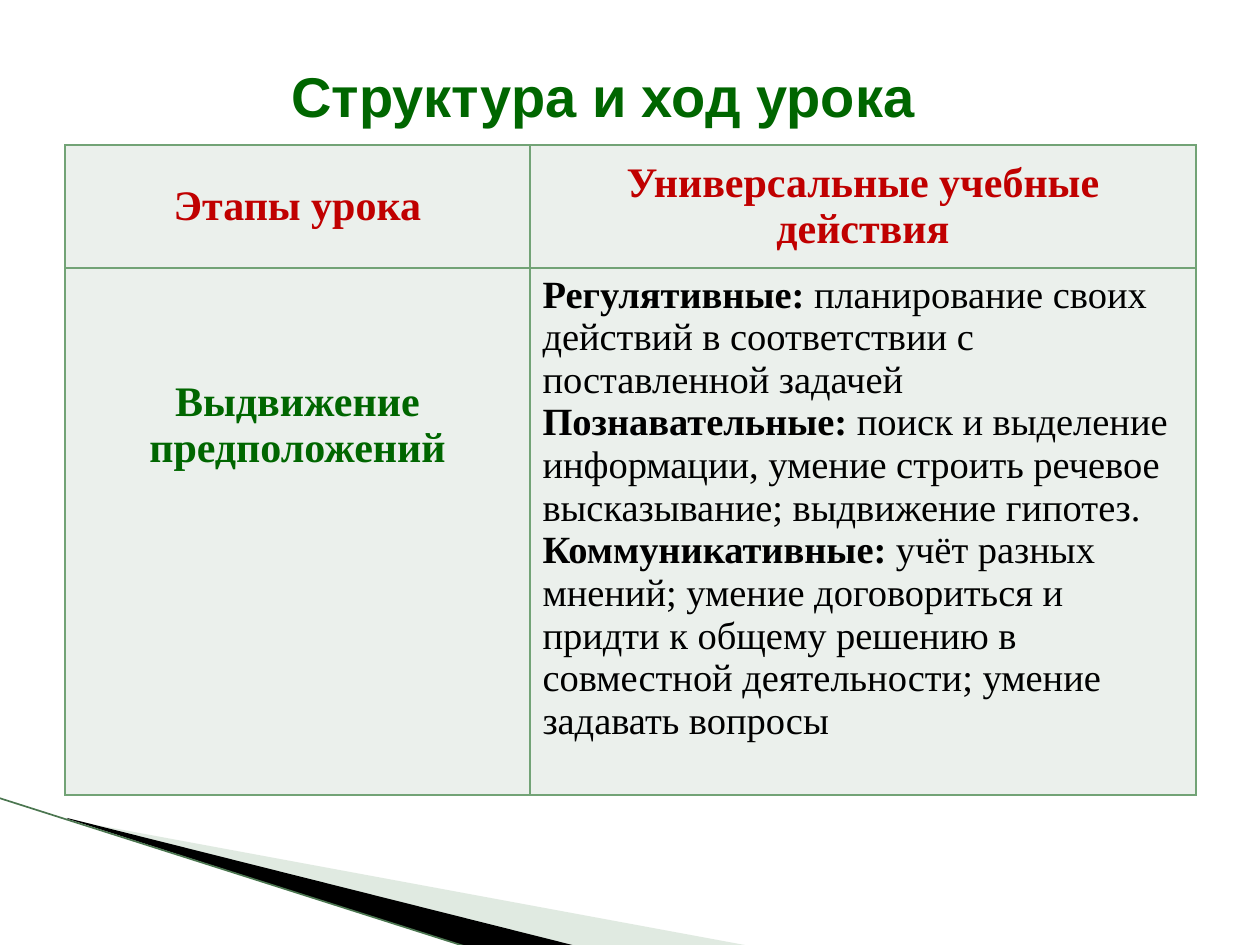
from dataclasses import dataclass

import pptx
import pptx.dml.color
import pptx.enum.shapes
import pptx.enum.text
import pptx.oxml
import pptx.oxml.ns
import pptx.util
from lxml import etree

RGBColor = pptx.dml.color.RGBColor
Align = pptx.enum.text.PP_ALIGN
Anchor = pptx.enum.text.MSO_ANCHOR
qn = pptx.oxml.ns.qn

PX_PER_INCH = 126
GREEN = RGBColor(0x00, 0x66, 0x00)
RED = RGBColor(0xC0, 0x00, 0x00)
BLACK = RGBColor(0x00, 0x00, 0x00)
SAGE = RGBColor(0xB3, 0xCB, 0xB5)
EDGE = RGBColor(0x4B, 0x76, 0x50)
BORDER = RGBColor(0x72, 0xA3, 0x76)
CELL_FILL = RGBColor(0xEB, 0xF0, 0xEC)
SERIF = "Times New Roman"


@dataclass
class Wedge:
    """The frame is left, top, width, height; points may lie outside it."""
    frame: tuple[int, int, int, int]
    points: list[tuple[int, int]]
    color: RGBColor
    opacity: int = 100


@dataclass
class Cell:
    """Each paragraph is a (bold part, regular part) pair."""
    paragraphs: list[tuple[str, str]]
    color: RGBColor
    size: int = 24
    align: Align = Align.CENTER
    anchor: Anchor = Anchor.TOP
    top: int = 6


WEDGES = [
    Wedge((98, 689, 524, 199),
          [(69, 820), (750, 946), (575, 946), (69, 819)], SAGE, 40),
    Wedge((-8, 798, 524, 116),
          [(67, 818), (576, 946), (469, 948), (68, 819)], BLACK),
]
COLUMNS = [465, 666]
ROWS = [123, 527]
CELLS = [
    [
        Cell([("Этапы урока", "")], RED, anchor=Anchor.MIDDLE),
        Cell([("Универсальные учебные действия", "")], RED, anchor=Anchor.MIDDLE),
    ],
    [
        Cell([("Выдвижение", ""), ("предположений", "")], GREEN, top=111),
        Cell([
            ("Регулятивные:", " планирование своих действий в соответствии с "
             "поставленной задачей"),
            ("Познавательные:", " поиск и выделение информации, умение строить "
             "речевое высказывание; выдвижение гипотез."),
            ("Коммуникативные:", " учёт разных мнений; умение договориться и "
             "придти к общему решению в совместной деятельности; умение "
             "задавать вопросы"),
        ], BLACK, size=22, align=Align.LEFT),
    ],
]


def px(n: int) -> pptx.util.Emu:
    return pptx.util.Emu(round(n * 914400 / PX_PER_INCH))


def style_run(r, font: str, size: int, color: RGBColor, bold: bool) -> None:
    r.font.name = font
    r.font.size = pptx.util.Pt(size)
    r.font.color.rgb = color
    r.font.bold = bold


def set_frame(sp, wedge: Wedge) -> None:
    """Give the outline its own frame, with the points measured from it."""
    left, top, width, height = wedge.frame
    sp.left, sp.top, sp.width, sp.height = map(px, wedge.frame)
    outline = next(sp.element.spPr.iter(qn("a:path")))
    outline.set("w", str(px(width)))
    outline.set("h", str(px(height)))
    for pt, (x, y) in zip(outline.iter(qn("a:pt")), wedge.points):
        pt.set("x", str(px(x - left)))
        pt.set("y", str(px(y - top)))


def draw_wedge(s, wedge: Wedge) -> None:
    start, *rest = wedge.points
    builder = s.shapes.build_freeform(*start, scale=914400 / PX_PER_INCH)
    builder.add_line_segments(rest, close=True)
    sp = builder.convert_to_shape()
    set_frame(sp, wedge)
    sp.shadow.inherit = False
    sp.fill.solid()
    sp.fill.fore_color.rgb = wedge.color
    sp.line.fill.background()
    if wedge.opacity < 100:
        clr = next(sp.element.spPr.iter(qn("a:srgbClr")))
        etree.SubElement(clr, qn("a:alpha")).set("val", str(wedge.opacity * 1000))


def draw_edge(s) -> None:
    line = s.shapes.add_connector(
        pptx.enum.shapes.MSO_CONNECTOR.STRAIGHT,
        px(-1), px(798), px(467), px(947))
    line.line.color.rgb = EDGE
    line.line.width = pptx.util.Pt(0.95)
    etree.SubElement(line.element.spPr, qn("a:effectLst"))


def set_borders(cell) -> None:
    tc_pr = cell._tc.get_or_add_tcPr()
    for i, side in enumerate(("lnL", "lnR", "lnT", "lnB")):
        ln = pptx.oxml.parse_xml(
            f'<a:{side} {pptx.oxml.ns.nsdecls("a")} w="12700"><a:solidFill>'
            f'<a:srgbClr val="{BORDER}"/></a:solidFill></a:{side}>')
        tc_pr.insert(i, ln)


def fill_cell(cell, content: Cell) -> None:
    cell.fill.solid()
    cell.fill.fore_color.rgb = CELL_FILL
    set_borders(cell)
    cell.vertical_anchor = content.anchor
    cell.margin_top = px(content.top)
    tf = cell.text_frame
    for i, parts in enumerate(content.paragraphs):
        p = tf.add_paragraph() if i else tf.paragraphs[0]
        p.alignment = content.align
        for text, bold in zip(parts, (True, False)):
            if text:
                r = p.add_run()
                r.text = text
                style_run(r, SERIF, content.size, content.color, bold)


def draw_table(s) -> None:
    frame = s.shapes.add_table(len(ROWS), len(COLUMNS), px(65), px(145),
                               px(sum(COLUMNS)), px(sum(ROWS)))
    table = frame.table
    table.horz_banding = False
    table.first_row = False
    for column, width in zip(table.columns, COLUMNS):
        column.width = px(width)
    for row, height, contents in zip(table.rows, ROWS, CELLS):
        row.height = px(height)
        for cell, content in zip(row.cells, contents):
            fill_cell(cell, content)


def draw_title(s) -> None:
    sp = s.shapes.add_textbox(px(64), px(55), px(1063), px(81))
    tf = sp.text_frame
    tf.word_wrap = True
    tf.text = " Структура и ход урока"
    p = tf.paragraphs[0]
    p.alignment = Align.CENTER
    style_run(p.runs[0], "Arial", 32, GREEN, True)


def main() -> None:
    prs = pptx.Presentation()
    prs.slide_width, prs.slide_height = px(1260), px(945)
    s = prs.slides.add_slide(prs.slide_layouts[6])

    # Corner decoration
    for wedge in WEDGES:
        draw_wedge(s, wedge)
    draw_edge(s)

    # Lesson content
    draw_table(s)
    draw_title(s)
    prs.save("out.pptx")


if __name__ == "__main__":
    main()
